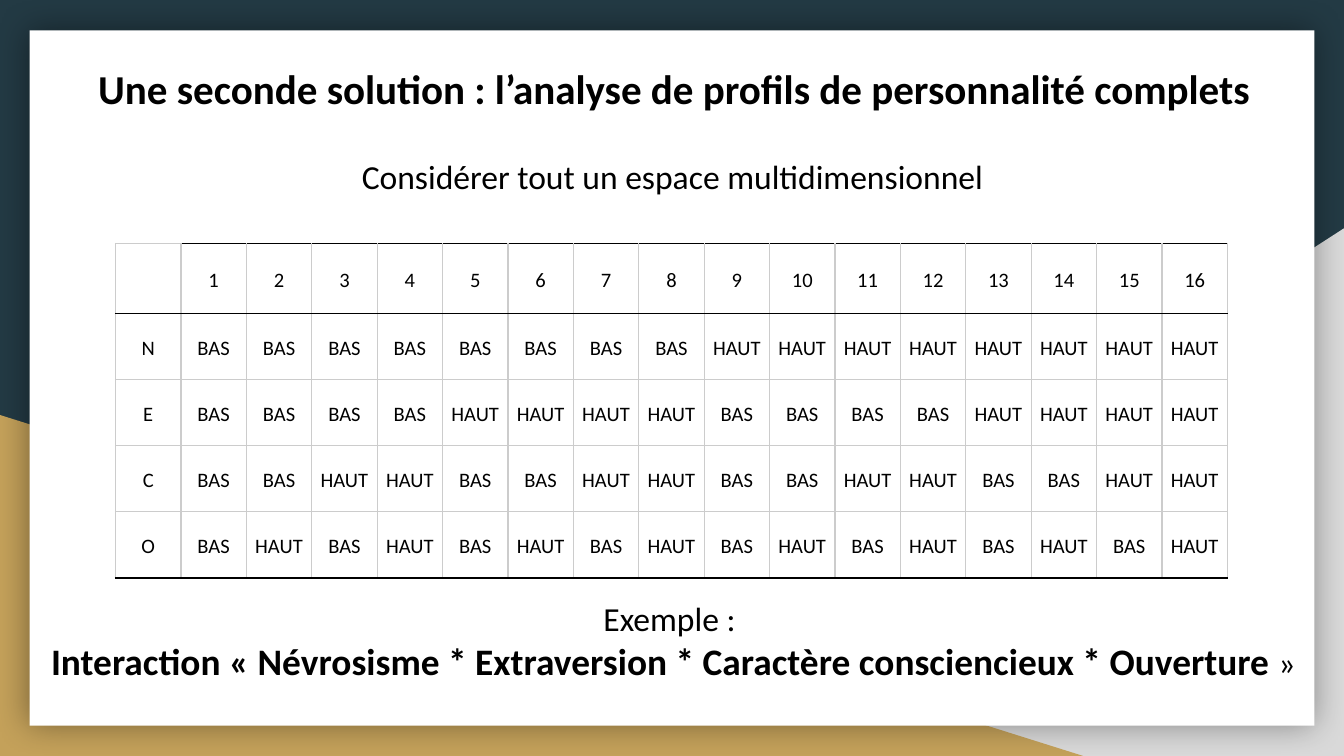
import dataclasses
import itertools

import pptx
import pptx.dml.color
import pptx.enum.shapes
import pptx.enum.text
import pptx.oxml
import pptx.oxml.ns
import pptx.util

SHAPES = pptx.enum.shapes.MSO_SHAPE
ANCHORS = pptx.enum.text.MSO_ANCHOR


@dataclasses.dataclass(frozen=True)
class Theme:
    font: str = "Calibri"
    background: str = "233A44"
    grey: str = "D9D9D9"
    gold: str = "C4A15A"
    panel: str = "FFFFFF"
    ink: str = "000000"
    grid_line: str = "CCCCCC"
    title_size: int = 22
    formula_size: int = 20
    text_size: int = 18
    cell_size: int = 11
    border_width: float = 0.75
    loose_spacing: float = 1.15


THEME = Theme()
WIDTH = pptx.util.Inches(10)
HEIGHT = WIDTH * 9 // 16
TRAITS = ("N", "E", "C", "O")
LEVELS = ("BAS", "HAUT")


def columns(count):
    """Length of columns on a grid of 100 across the slide."""
    return round(WIDTH * count / 100)


def rows(count):
    """Length of rows on a grid of 100 down the slide."""
    return round(HEIGHT * count / 100)


def box(left, top, width, height):
    return columns(left), rows(top), columns(width), rows(height)


def colour(value):
    return pptx.dml.color.RGBColor.from_string(value)


def add_plain_shape(slide, kind, place, fill):
    shape = slide.shapes.add_shape(kind, *box(*place))
    shape.shadow.inherit = False
    shape.fill.solid()
    shape.fill.fore_color.rgb = colour(fill)
    shape.line.fill.background()
    return shape


def flip_horizontally(shape):
    shape.element.spPr.find(pptx.oxml.ns.qn("a:xfrm")).set("flipH", "1")


def add_soft_shadow(shape, blur, opacity):
    effects = shape.element.spPr.find(pptx.oxml.ns.qn("a:effectLst"))
    effects.append(pptx.oxml.parse_xml(
        f'<a:outerShdw {pptx.oxml.ns.nsdecls("a")} blurRad="{pptx.util.Pt(blur)}" '
        f'dist="0" dir="0" algn="ctr" rotWithShape="0"><a:srgbClr val="{THEME.ink}">'
        f'<a:alpha val="{opacity * 1000}"/></a:srgbClr></a:outerShdw>'))


def add_run(paragraph, text, size, bold=False):
    run = paragraph.add_run()
    run.text = text
    run.font.name = THEME.font
    run.font.size = pptx.util.Pt(size)
    run.font.bold = bold
    run.font.color.rgb = colour(THEME.ink)


def fill_paragraph(paragraph, runs, spacing=None):
    paragraph.alignment = pptx.enum.text.PP_ALIGN.CENTER
    paragraph.line_spacing = spacing
    for run in runs:
        add_run(paragraph, *run)


def add_text(slide, place, paragraphs, spacing=None, anchor=ANCHORS.TOP, bottom=0.1):
    frame = slide.shapes.add_textbox(*box(*place)).text_frame
    frame.word_wrap = True
    frame.vertical_anchor = anchor
    frame.margin_left = frame.margin_right = frame.margin_top = pptx.util.Inches(0.1)
    frame.margin_bottom = pptx.util.Inches(bottom)
    for index, runs in enumerate(paragraphs):
        paragraph = frame.add_paragraph() if index else frame.paragraphs[0]
        fill_paragraph(paragraph, runs, spacing)


def set_borders(cell, top, bottom):
    properties = cell._tc.get_or_add_tcPr()
    sides = {"lnL": THEME.grid_line, "lnR": THEME.grid_line, "lnT": top, "lnB": bottom}
    for position, (side, line) in enumerate(sides.items()):
        properties.insert(position, pptx.oxml.parse_xml(
            f'<a:{side} {pptx.oxml.ns.nsdecls("a")} w="{pptx.util.Pt(THEME.border_width)}">'
            f'<a:solidFill><a:srgbClr val="{line}"/></a:solidFill></a:{side}>'))


def fill_cell(cell, text):
    cell.fill.background()
    cell.vertical_anchor = ANCHORS.MIDDLE
    cell.margin_left = cell.margin_right = pptx.util.Inches(0.03)
    cell.margin_top = cell.margin_bottom = pptx.util.Inches(0.1)
    if text:
        fill_paragraph(cell.text_frame.paragraphs[0], [(text, THEME.cell_size)],
                       THEME.loose_spacing)


def profile_rows():
    """Every combination of low and high traits, one profile a column."""
    profiles = list(itertools.product(LEVELS, repeat=len(TRAITS)))
    header = ["", *(str(number) for number in range(1, len(profiles) + 1))]
    return [header, *([trait, *levels] for trait, levels in zip(TRAITS, zip(*profiles)))]


def add_profile_table(slide, left, top, column_width, header_height, row_height):
    content = profile_rows()
    column_count, last = len(content[0]), len(content) - 1
    place = box(left, top, column_width * column_count, header_height + row_height * last)
    table = slide.shapes.add_table(len(content), column_count, *place).table
    table.first_row = table.horz_banding = False
    for column in table.columns:
        column.width = columns(column_width)
    for row_index, texts in enumerate(content):
        table.rows[row_index].height = rows(row_height if row_index else header_height)
        for column_index, text in enumerate(texts):
            cell = table.cell(row_index, column_index)
            fill_cell(cell, text)
            is_corner = row_index == column_index == 0
            set_borders(
                cell,
                top=THEME.ink if row_index < 2 and not is_corner else THEME.grid_line,
                bottom=THEME.ink if row_index in (0, last) else THEME.grid_line)


def add_backdrop(slide):
    slide.background.fill.solid()
    slide.background.fill.fore_color.rgb = colour(THEME.background)
    grey = add_plain_shape(slide, SHAPES.RIGHT_TRIANGLE, (39.2, 30.2, 60.8, 69.8), THEME.grey)
    flip_horizontally(grey)
    add_plain_shape(slide, SHAPES.RIGHT_TRIANGLE, (0, 54.9, 80.6, 45.1), THEME.gold)
    panel = add_plain_shape(slide, SHAPES.RECTANGLE, (2.2, 4, 95.6, 92), THEME.panel)
    add_soft_shadow(panel, blur=18, opacity=40)


def main():
    presentation = pptx.Presentation()
    presentation.slide_width, presentation.slide_height = WIDTH, HEIGHT
    slide = presentation.slides.add_slide(presentation.slide_layouts[6])
    add_backdrop(slide)
    add_text(slide, (3.4, 6.6, 93.5, 11.4), [
        [("Une seconde solution : l’analyse de profils de personnalité complets",
          THEME.title_size, True)]])
    add_text(slide, (9, 18, 82.1, 8.4), [
        [("Considérer tout un espace multidimensionnel", THEME.text_size)]],
        spacing=THEME.loose_spacing)
    add_text(slide, (2.5, 82.3, 95.2, 8.4), [
        [("Exemple : ", THEME.text_size)],
        [("Interaction « Névrosisme * Extraversion * Caractère consciencieux * Ouverture ",
          THEME.formula_size, True), ("»", THEME.text_size)]],
        anchor=ANCHORS.MIDDLE, bottom=0.3)
    add_profile_table(slide, left=8.6, top=32.2, column_width=4.87,
                      header_height=9.24, row_height=8.76)
    presentation.save("out.pptx")


if __name__ == "__main__":
    main()
